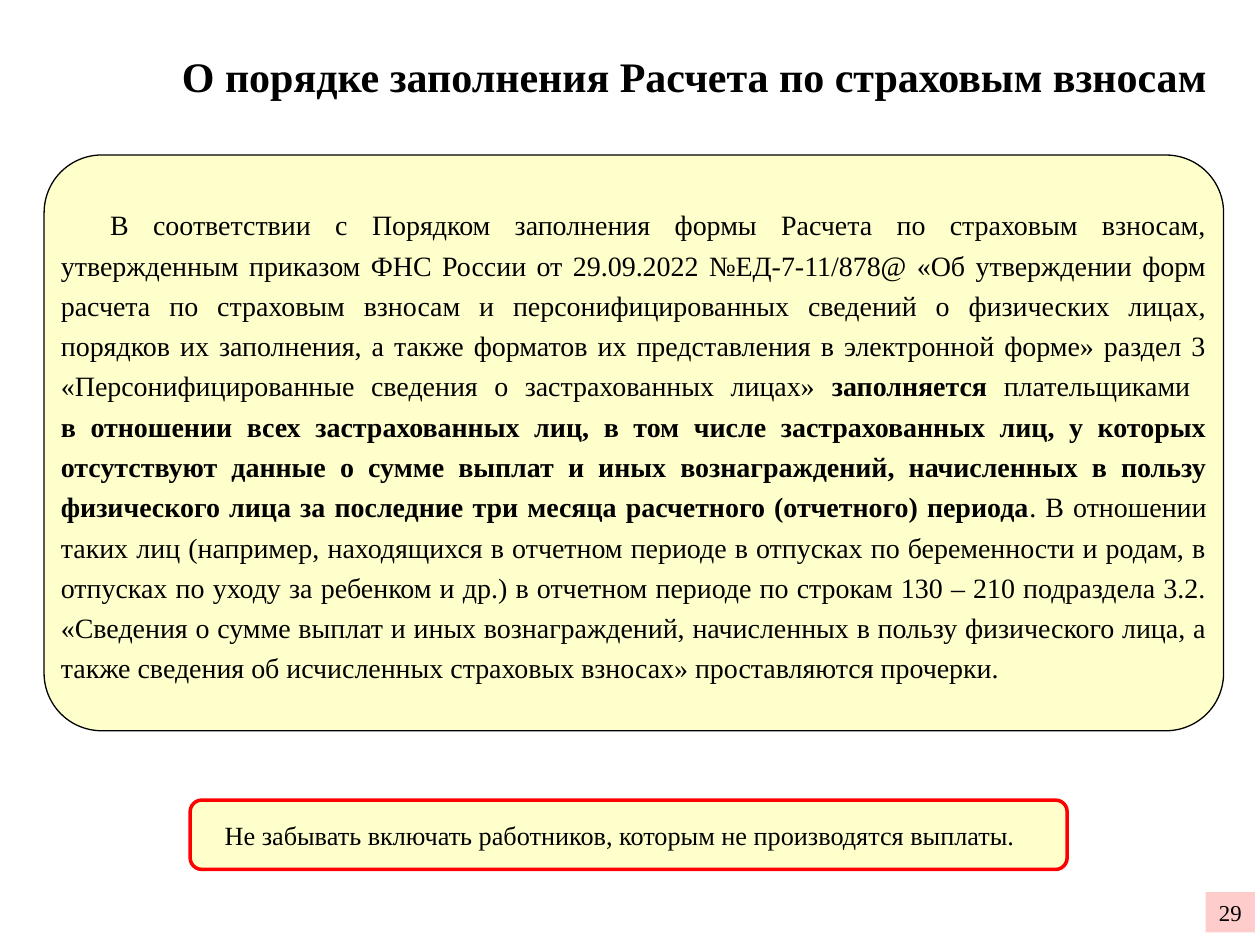
from dataclasses import dataclass

from pptx import Presentation
from pptx.dml.color import RGBColor
from pptx.enum.shapes import MSO_SHAPE
from pptx.enum.text import MSO_ANCHOR, PP_ALIGN
from pptx.util import Pt

ROUNDED = MSO_SHAPE.ROUNDED_RECTANGLE
ALTERNATE = MSO_SHAPE.FLOWCHART_ALTERNATE_PROCESS
RECTANGLE = MSO_SHAPE.RECTANGLE
MIDDLE = MSO_ANCHOR.MIDDLE
CENTER, JUSTIFY = PP_ALIGN.CENTER, PP_ALIGN.JUSTIFY
TITLE_ONLY = 5


@dataclass(frozen=True)
class Theme:
    font: str = "Times New Roman"
    ink: RGBColor = RGBColor(0, 0, 0)
    cream: RGBColor = RGBColor(0xFF, 0xFF, 0xCC)
    pink: RGBColor = RGBColor(0xFF, 0xCC, 0xCC)
    red: RGBColor = RGBColor(0xFF, 0, 0)
    title_size: float = 24
    body_size: float = 16
    note_size: float = 15
    number_size: float = 13


THEME = Theme()

TITLE = "О порядке заполнения Расчета по страховым взносам"
REMINDER = "Не забывать включать работников, которым не производятся выплаты."
# Each span is (text, bold); a newline ends the line inside the paragraph.
RULE_SPANS = [
    ("В соответствии с Порядком заполнения формы Расчета по страховым взносам, "
     "утвержденным приказом ФНС России от 29.09.2022 №ЕД-7-11/878@ «Об утверждении "
     "форм расчета по страховым взносам и персонифицированных сведений о физических "
     "лицах, порядков их заполнения, а также форматов их представления в электронной "
     "форме» раздел 3 «Персонифицированные сведения о застрахованных лицах» ", False),
    ("заполняется ", True),
    ("плательщиками \n", False),
    ("в отношении всех застрахованных лиц, в том числе застрахованных лиц, у которых "
     "отсутствуют данные о сумме выплат и иных вознаграждений, начисленных в пользу "
     "физического лица за последние три месяца расчетного (отчетного) периода", True),
    (". В отношении таких лиц (например, находящихся в отчетном периоде в отпусках по "
     "беременности и родам, в отпусках по уходу за ребенком и др.) в отчетном периоде "
     "по строкам 130 – 210 подраздела 3.2. «Сведения о сумме выплат и иных "
     "вознаграждений, начисленных в пользу физического лица, а также сведения об "
     "исчисленных страховых взносах» проставляются прочерки.", False),
]


def write(box, spans, size, align, indent=0, spacing=None, inset=0):
    """Fill the box with one paragraph of (text, bold) spans."""
    frame = box.text_frame
    frame.word_wrap = True
    frame.vertical_anchor = MIDDLE
    frame.margin_left = frame.margin_right = Pt(inset)
    frame.margin_top = frame.margin_bottom = 0
    para = frame.paragraphs[0]
    para.alignment = align
    if spacing:
        para.line_spacing = spacing
    if indent:
        properties = para._p.get_or_add_pPr()
        properties.set("marL", "0")
        properties.set("indent", str(Pt(indent)))
    for text, bold in spans:
        span = para.add_run()
        span.text = text.rstrip("\n")
        span.font.name = THEME.font
        span.font.size = Pt(size)
        span.font.bold = bold
        span.font.color.rgb = THEME.ink
        if text.endswith("\n"):
            para.add_line_break()


def add_panel(page, kind, bounds, fill, line=None, weight=0):
    panel = page.shapes.add_shape(kind, *map(Pt, bounds))
    panel.shadow.inherit = False
    panel.fill.solid()
    panel.fill.fore_color.rgb = fill
    if line is None:
        panel.line.fill.background()
    else:
        panel.line.color.rgb = line
        panel.line.width = Pt(weight)
    return panel


def set_title(page, text):
    title = page.shapes.title
    title.left, title.top, title.width, title.height = map(Pt, (87.8, 15.1, 617.8, 56.2))
    write(title, [(text, True)], THEME.title_size, CENTER, inset=7.2)


def main():
    deck = Presentation()
    deck.slide_width, deck.slide_height = Pt(720), Pt(540)
    page = deck.slides.add_slide(deck.slide_layouts[TITLE_ONLY])
    set_title(page, TITLE)

    rule = add_panel(page, ROUNDED, (25.2, 88.6, 674, 329), THEME.cream, THEME.ink, 0.75)
    rule.adjustments[0] = 0.1
    write(rule, RULE_SPANS, THEME.body_size, JUSTIFY, indent=28.1, spacing=1.2)

    number = add_panel(page, RECTANGLE, (689, 509.8, 28.1, 23), THEME.pink)
    write(number, [("29", False)], THEME.number_size, CENTER)

    reminder = add_panel(page, ALTERNATE, (108.7, 457.2, 501.1, 39.6),
                         THEME.cream, THEME.red, 2)
    write(reminder, [(REMINDER, False)], THEME.note_size, JUSTIFY, indent=12, inset=5.8)

    deck.save("out.pptx")


if __name__ == "__main__":
    main()
